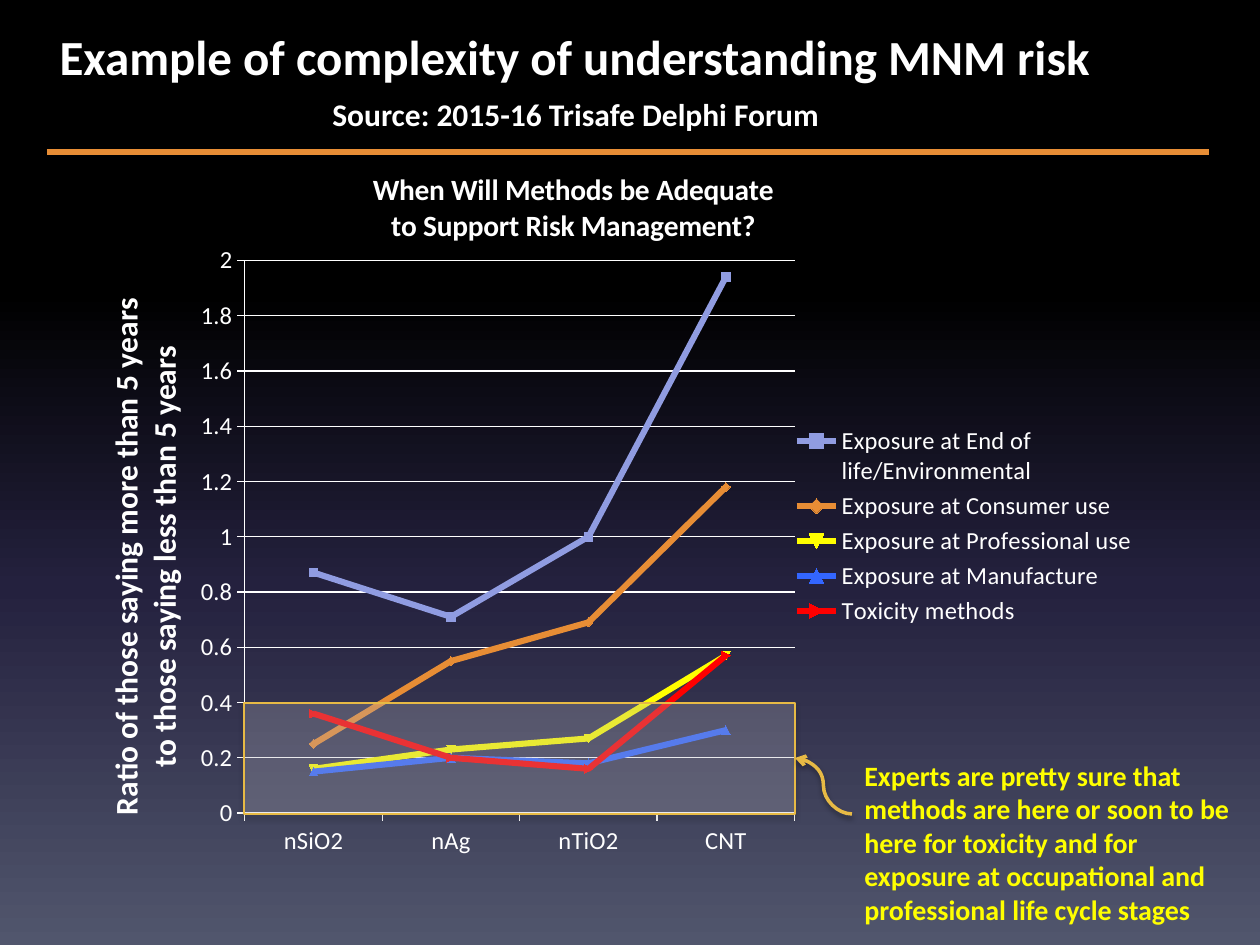
import dataclasses

import pptx
import pptx.chart.data
import pptx.dml.color
import pptx.enum.chart
import pptx.enum.shapes
import pptx.enum.text
import pptx.oxml
import pptx.oxml.ns
import pptx.util

SCALE = 914400 / 126
NS = pptx.oxml.ns.nsdecls
QN = pptx.oxml.ns.qn
PT = pptx.util.Pt


@dataclasses.dataclass(frozen=True)
class Theme:
    font: str = "Calibri"
    white: str = "FFFFFF"
    yellow: str = "FFFF00"
    orange: str = "E78D35"
    gold: str = "E7BA45"
    haze: str = "E5E4F1"
    sky: tuple = ((0, "000000"), (31, "000000"), (62, "24213E"), (100, "51566D"))
    lines: tuple = ("909CE1", "E78D35", "FFFF00", "3366FF", "FF0000")
    head: float = 28
    sub: float = 18
    chart: float = 16.8
    note: float = 16
    label: float = 14


def px(*nums):
    return [pptx.util.Emu(round(n * SCALE)) for n in nums]


def rgb(code):
    return pptx.dml.color.RGBColor.from_string(code)


def place(node, spot, **box):
    """Give a chart part a manual layout, as fractions of the chart."""
    old = node.find(QN("c:layout"))
    if old is not None:
        node.remove(old)
    target = '<c:layoutTarget val="inner"/>' if node.tag == QN("c:plotArea") else ""
    modes = "".join(f'<c:{k}Mode val="edge"/>' for k in "xy")
    sizes = "".join(f'<c:{k} val="{v}"/>' for k, v in box.items())
    node.insert(spot, pptx.oxml.parse_xml(
        f'<c:layout {NS("c")}><c:manualLayout>{target}{modes}{sizes}'
        "</c:manualLayout></c:layout>"))


class Page:
    def __init__(self, deck, theme):
        self.theme = theme
        self.slide = deck.slides.add_slide(deck.slide_layouts[5])
        self.shapes = self.slide.shapes

    def back(self):
        fill = self.slide.background.fill
        fill.gradient()
        fill.gradient_angle = 270
        stops = next(self.slide.element.iter(QN("a:gsLst")))
        for stop in list(stops):
            stops.remove(stop)
        for pos, code in self.theme.sky:
            stops.append(pptx.oxml.parse_xml(
                f'<a:gs {NS("a")} pos="{pos * 1000}"><a:srgbClr val="{code}"/></a:gs>'))

    def style(self, font, size, color, bold=True):
        font.name, font.size, font.bold = self.theme.font, PT(size), bold
        font.color.rgb = rgb(color)

    def words(self, shape, text, size, color, wrap=True):
        frame = shape.text_frame
        frame.text = text
        frame.word_wrap = wrap
        frame.auto_size = pptx.enum.text.MSO_AUTO_SIZE.NONE
        frame.vertical_anchor = pptx.enum.text.MSO_ANCHOR.TOP
        para = frame.paragraphs[0]
        para.alignment = pptx.enum.text.PP_ALIGN.LEFT
        self.style(para.font, size, color)

    def title(self, text, *box):
        shape = self.shapes.title
        shape.left, shape.top, shape.width, shape.height = px(*box)
        self.words(shape, text, self.theme.head, self.theme.white, wrap=False)

    def text(self, text, size, color, *box):
        self.words(self.shapes.add_textbox(*px(*box)), text, size, color)

    def shade(self, shape):
        """Put a soft shadow just below the shape."""
        props = shape.element.spPr
        old = props.find(QN("a:effectLst"))
        if old is not None:
            props.remove(old)
        props.append(pptx.oxml.parse_xml(
            f'<a:effectLst {NS("a")}><a:outerShdw blurRad="{PT(3.1)}" dist="{PT(1.8)}" '
            'dir="5400000" rotWithShape="0"><a:srgbClr val="000000">'
            '<a:alpha val="35000"/></a:srgbClr></a:outerShdw></a:effectLst>'))

    def band(self, *box):
        shape = self.shapes.add_shape(
            pptx.enum.shapes.MSO_SHAPE.RECTANGLE, *px(*box))
        shape.fill.solid()
        shape.fill.fore_color.rgb = rgb(self.theme.haze)
        tint = shape.element.spPr.find(QN("a:solidFill"))[0]
        tint.append(pptx.oxml.parse_xml(f'<a:alpha {NS("a")} val="22000"/>'))
        shape.line.color.rgb = rgb(self.theme.gold)
        shape.line.width = PT(0.75)
        self.shade(shape)

    def line(self, color, width, *ends, curve=False, arrow=False):
        kinds = pptx.enum.shapes.MSO_CONNECTOR
        shape = self.shapes.add_connector(
            kinds.CURVE if curve else kinds.STRAIGHT, *px(*ends))
        shape.line.color.rgb = rgb(color)
        shape.line.width = PT(width)
        if arrow:
            shape.element.spPr.find(QN("a:ln")).append(
                pptx.oxml.parse_xml(f'<a:tailEnd {NS("a")} type="arrow"/>'))
        self.shade(shape)

    def label(self, title, text, size, **spot):
        """Fill and place a chart or axis title."""
        frame = title.text_frame
        frame.text = text
        for para in frame.paragraphs:
            para.alignment = pptx.enum.text.PP_ALIGN.CENTER
            self.style(para.font, size, self.theme.white)
        place(title._element, 1, **spot)

    def chart(self, cats, rows, *box):
        enum, white = pptx.enum.chart, rgb(self.theme.white)
        data = pptx.chart.data.CategoryChartData()
        data.categories = cats
        for name, vals in rows:
            data.add_series(name, vals)
        chart = self.shapes.add_chart(
            enum.XL_CHART_TYPE.LINE_MARKERS, *px(*box), data).chart
        self.style(chart.font, self.theme.label, self.theme.white, bold=False)
        plot = chart.plots[0]
        plot.vary_by_categories = False
        area = next(chart.element.iter(QN("c:plotArea")))
        place(area, 0, x=0.164, y=0.145, w=0.513, h=0.739)

        for row, code in zip(plot.series, self.theme.lines):
            row.smooth = False
            row.format.line.color.rgb = rgb(code)
            row.format.line.width = PT(3.5)
            row.marker.size = 5
            row.marker.format.fill.solid()
            row.marker.format.fill.fore_color.rgb = rgb(code)
            row.marker.format.line.color.rgb = rgb(code)

        axis = chart.value_axis
        axis.minimum_scale, axis.maximum_scale, axis.major_unit = 0, 2, 0.2
        axis.has_major_gridlines = True
        for part in (axis, chart.category_axis, axis.major_gridlines):
            part.format.line.color.rgb = white
            part.format.line.width = PT(0.75)

        chart.has_title = True
        self.label(chart.chart_title, "When Will Methods be Adequate\n"
                   "to Support Risk Management?", self.theme.chart, x=0.28, y=0.02)
        self.label(axis.axis_title, "Ratio of those saying more than 5 years\n"
                   "to those saying less than 5 years", self.theme.sub, x=0.03, y=0.19)
        turn = next(axis.axis_title._element.iter(QN("a:bodyPr")))
        turn.set("rot", "-5400000")
        turn.set("vert", "horz")

        chart.has_legend = True
        chart.legend.position = enum.XL_LEGEND_POSITION.RIGHT
        chart.legend.include_in_layout = False
        place(chart.legend._element, 1, x=0.67, y=0.36, w=0.33, h=0.28)


def main():
    deck = pptx.Presentation()
    deck.slide_width, deck.slide_height = px(1260, 945)
    theme = Theme()
    page = Page(deck, theme)
    page.back()
    page.title("Example of complexity of understanding MNM risk", 47, 20, 1105, 72)
    page.chart(("nSiO2", "nAg", "nTiO2", "CNT"), (
        ("Exposure at End of life/Environmental", (0.87, 0.71, 1, 1.94)),
        ("Exposure at Consumer use", (0.25, 0.55, 0.69, 1.18)),
        ("Exposure at Professional use", (0.16, 0.23, 0.27, 0.57)),
        ("Exposure at Manufacture", (0.15, 0.2, 0.18, 0.3)),
        ("Toxicity methods", (0.36, 0.2, 0.16, 0.57)),
    ), 69, 152, 1072, 748)
    page.band(244, 703, 551, 111)
    page.text("Experts are pretty sure that methods are here or soon to be here for "
              "toxicity and for exposure at occupational and professional life cycle "
              "stages", theme.note, theme.yellow, 852, 752, 396, 123)
    page.line(theme.gold, 2, 852, 814, 795, 758, curve=True, arrow=True)
    page.text("Source: 2015-16 Trisafe Delphi Forum", theme.sub, theme.white,
              320, 89, 605, 50)
    page.line(theme.orange, 3, 47, 152, 1209, 152)
    deck.save("out.pptx")


if __name__ == "__main__":
    main()
